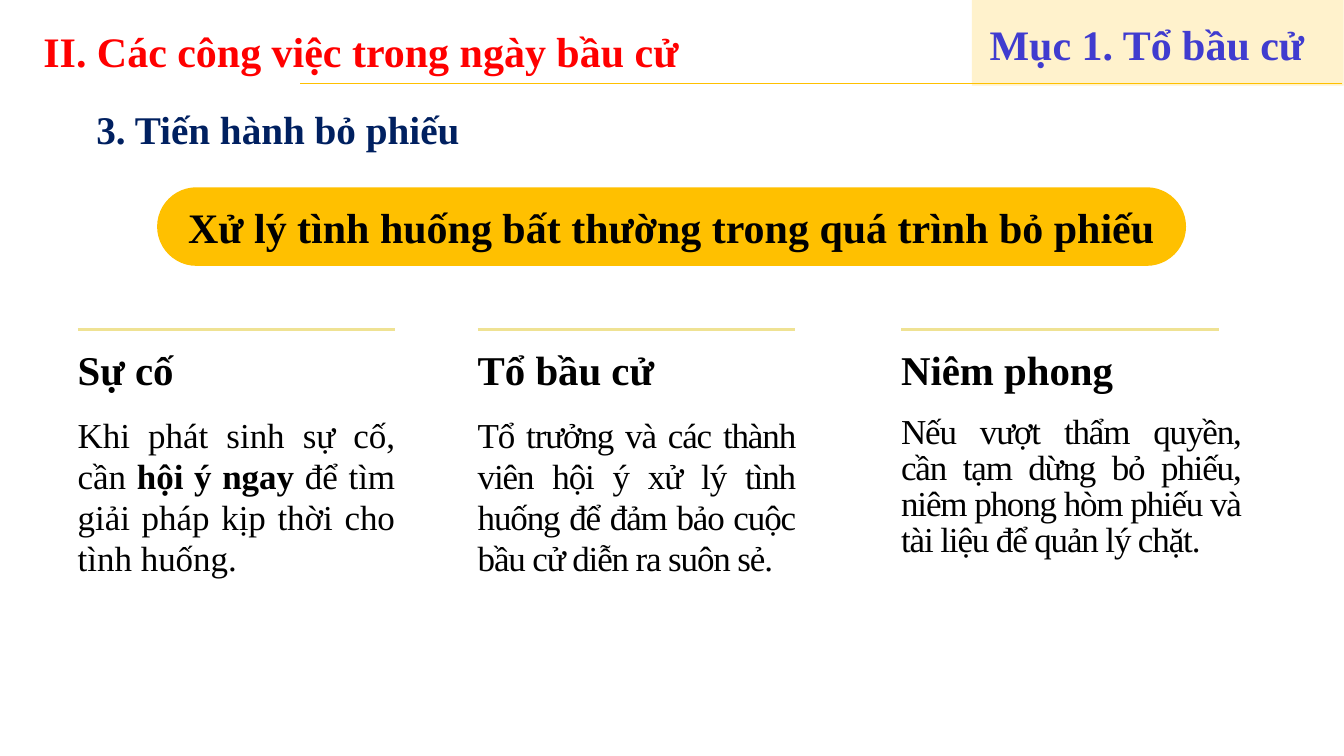
from dataclasses import dataclass

from lxml import etree
from pptx import Presentation
from pptx.dml.color import RGBColor
from pptx.enum.shapes import MSO_CONNECTOR, MSO_SHAPE
from pptx.enum.text import MSO_ANCHOR, MSO_AUTO_SIZE, PP_ALIGN
from pptx.oxml.ns import qn
from pptx.util import Cm, Pt

STRAIGHT = MSO_CONNECTOR.STRAIGHT
RECTANGLE, ROUNDED = MSO_SHAPE.RECTANGLE, MSO_SHAPE.ROUNDED_RECTANGLE
TOP, MIDDLE = MSO_ANCHOR.TOP, MSO_ANCHOR.MIDDLE
FIXED, GROW = MSO_AUTO_SIZE.NONE, MSO_AUTO_SIZE.SHAPE_TO_FIT_TEXT
LEFT, CENTER, JUSTIFY = PP_ALIGN.LEFT, PP_ALIGN.CENTER, PP_ALIGN.JUSTIFY
TITLE_ONLY = 5


@dataclass(frozen=True)
class Theme:
    font: str = "Times New Roman"
    title_color: str = "FF0000"
    section_color: str = "403CCF"
    subtitle_color: str = "002060"
    text_color: str = "000000"
    amber: str = "FFC000"
    cream: str = "FFF2CC"
    column_rule: str = "EFE293"
    title_size: float = 30
    subtitle_size: float = 28
    heading_size: float = 29.2
    body_size: float = 25


def write_text(box, text, *, font, size, color, bold=False, align=LEFT,
               leading=None, tracking=0, anchor=TOP, wrap=True, fit=FIXED,
               inset=True):
    """Fill a box with one paragraph; parts between ** marks are bold."""
    frame = box.text_frame
    frame.word_wrap = wrap
    frame.auto_size = fit
    frame.vertical_anchor = anchor
    if not inset:
        frame.margin_left = frame.margin_right = 0
        frame.margin_top = frame.margin_bottom = 0
    para = frame.paragraphs[0]
    para.alignment = align
    if leading:
        para.line_spacing = Pt(leading)
    for index, part in enumerate(text.split("**")):
        span = para.add_run()
        span.text = part
        span.font.name = font
        span.font.size = Pt(size)
        span.font.bold = bold or index % 2 == 1
        span.font.color.rgb = RGBColor.from_string(color)
        if tracking:
            span.font._element.set("spc", str(round(tracking * 100)))


class SlideBuilder:
    def __init__(self, slide, theme):
        self.slide = slide
        self.theme = theme

    def title(self, text, area):
        box = self.slide.shapes.title
        box.left, box.top, box.width, box.height = map(Cm, area)
        write_text(box, text, font=self.theme.font, size=self.theme.title_size,
                   color=self.theme.title_color, bold=True, anchor=MIDDLE)

    def text(self, text, area, **style):
        box = self.slide.shapes.add_textbox(*map(Cm, area))
        write_text(box, text, font=self.theme.font, **style)

    def panel(self, kind, area, color):
        panel = self.slide.shapes.add_shape(kind, *map(Cm, area))
        panel.shadow.inherit = False
        panel.fill.solid()
        panel.fill.fore_color.rgb = RGBColor.from_string(color)
        panel.line.fill.background()
        return panel

    def banner(self, text, area):
        pill = self.panel(ROUNDED, area, self.theme.amber)
        pill.adjustments[0] = 0.5
        write_text(pill, text, font=self.theme.font, size=self.theme.title_size,
                   color=self.theme.text_color, bold=True, align=CENTER,
                   anchor=MIDDLE)

    def rule(self, left, right, top, color, width):
        line = self.slide.shapes.add_connector(
            STRAIGHT, Cm(left), Cm(top), Cm(right), Cm(top))
        line.line.color.rgb = RGBColor.from_string(color)
        line.line.width = Pt(width)
        etree.SubElement(line._element.spPr, qn("a:effectLst"))

    def column(self, left, heading, body, *, width=8, leading=29.2, tracking=0):
        theme = self.theme
        self.text(body, (left, 10.46, width, leading * 4 / 72 * 2.54),
                  size=theme.body_size, color=theme.text_color, align=JUSTIFY,
                  leading=leading, tracking=tracking, fit=GROW, inset=False)
        self.text(heading, (left, 9.14, width, 0.84), size=theme.heading_size,
                  color=theme.text_color, bold=True, leading=22.4, fit=GROW,
                  inset=False)
        self.rule(left, left + 8, 8.31, theme.column_rule, 2)


def main():
    deck = Presentation()
    deck.slide_width, deck.slide_height = Cm(33.87), Cm(19.05)
    theme = Theme()
    page = SlideBuilder(
        deck.slides.add_slide(deck.slide_layouts[TITLE_ONLY]), theme)

    page.title("II. Các công việc trong ngày bầu cử", (0.84, 0, 32.51, 2.54))
    page.panel(RECTANGLE, (24.49, 0, 9.37, 2.16), theme.cream)
    page.rule(7.57, 33.81, 2.11, theme.amber, 0.5)
    page.text("Mục 1. Tổ bầu cử", (24.94, 0.61, 8.92, 1.04),
              size=theme.title_size, color=theme.section_color, bold=True,
              leading=32.1, wrap=False, inset=False)
    page.text("3. Tiến hành bỏ phiếu", (2.18, 2.18, 9.78, 1.68),
              size=theme.subtitle_size, color=theme.subtitle_color, bold=True,
              leading=43.8, wrap=False, fit=GROW)

    page.column(1.96, "Sự cố",
                "Khi phát sinh sự cố, cần **hội ý ngay **để tìm giải pháp "
                "kịp thời cho tình huống.")
    page.column(12.04, "Tổ bầu cử",
                "Tổ trưởng và các thành viên hội ý xử lý tình huống để đảm "
                "bảo cuộc bầu cử diễn ra suôn sẻ.", tracking=-0.8)
    page.column(22.71, "Niêm phong",
                "Nếu vượt thẩm quyền, cần tạm dừng bỏ phiếu, niêm phong hòm "
                "phiếu và tài liệu để quản lý chặt.",
                width=8.56, leading=25.8, tracking=-0.8)
    page.banner("Xử lý tình huống bất thường trong quá trình bỏ phiếu",
                (3.96, 4.72, 25.93, 1.98))

    deck.save("out.pptx")


if __name__ == "__main__":
    main()
